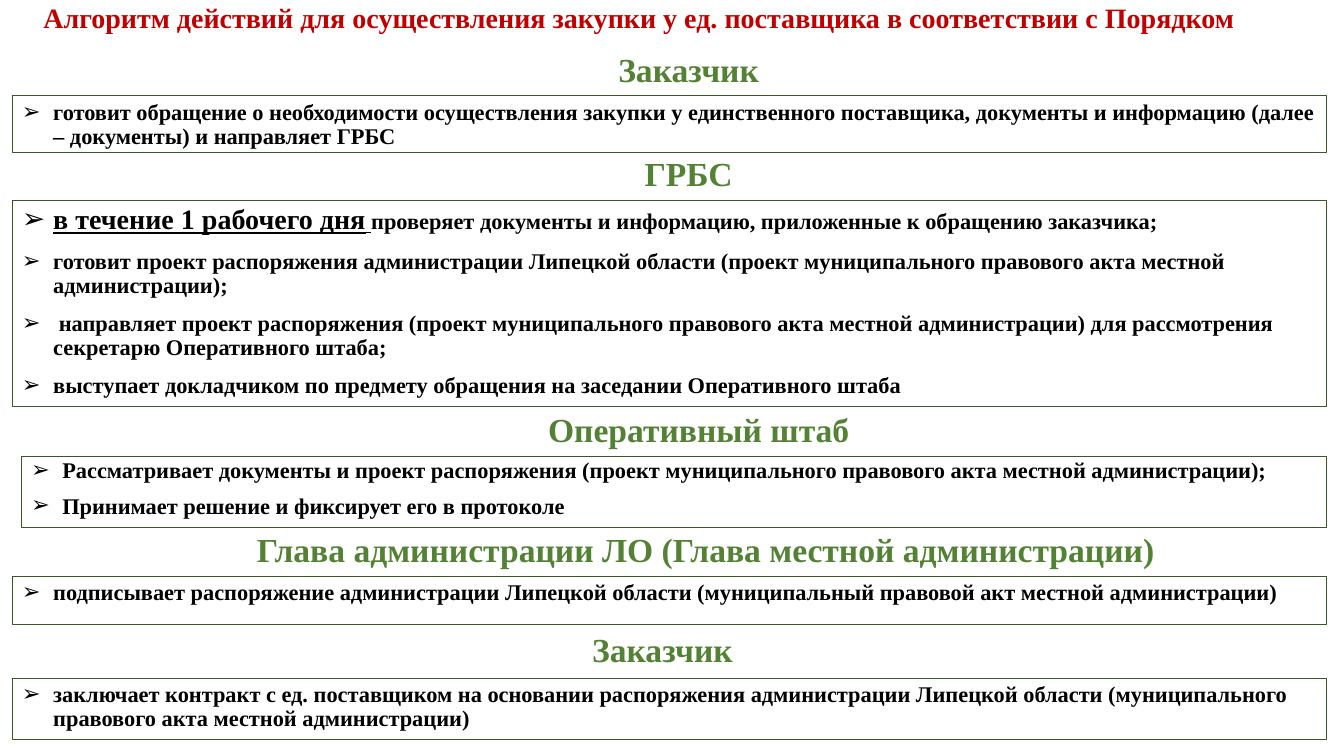
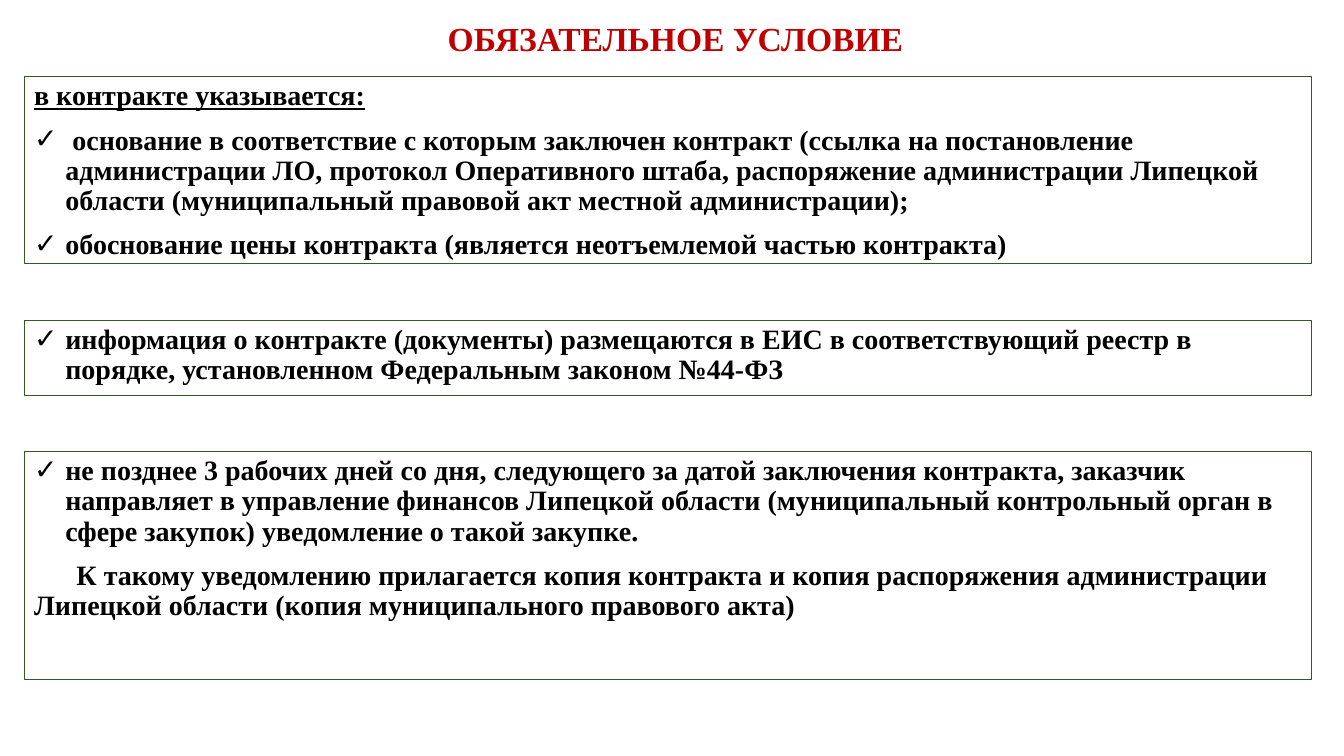
from lxml import etree
from pptx import Presentation
from pptx.dml.color import RGBColor
from pptx.enum.shapes import MSO_SHAPE
from pptx.enum.text import MSO_ANCHOR, MSO_AUTO_SIZE, PP_ALIGN
from pptx.oxml.ns import qn
from pptx.util import Inches, Pt

RECTANGLE = MSO_SHAPE.RECTANGLE
TOP, BOTTOM = MSO_ANCHOR.TOP, MSO_ANCHOR.BOTTOM
LEFT, CENTER = PP_ALIGN.LEFT, PP_ALIGN.CENTER
NO_AUTOFIT = MSO_AUTO_SIZE.NONE

FONT = "Times New Roman"
COLORS = {"title": "C00000", "actor": "548235", "border": "385723", "text": "000000"}
# Paragraph style: marker, left margin, first-line indent
STYLES = {
    "arrow": ("➢", 0.31, -0.31),
    "check": ("✓", 0.31, -0.31),
    "plain": ("", 0, 0),
    "first line": ("", 0, 0.42),
}


def write_paragraphs(shape, paragraphs, color, align=LEFT, anchor=TOP, spacing=0.9):
    """Fill a shape with (style, runs) paragraphs; a run is (text, size, underlined)."""
    frame = shape.text_frame
    frame.word_wrap = True
    frame.auto_size = NO_AUTOFIT
    frame.vertical_anchor = anchor
    for index, (style, runs) in enumerate(paragraphs):
        paragraph = frame.add_paragraph() if index else frame.paragraphs[0]
        paragraph.alignment = align
        paragraph.line_spacing = spacing
        paragraph.space_before = Pt(10)
        marker, margin, indent = STYLES[style]
        properties = paragraph._p.get_or_add_pPr()
        properties.set("marL", str(Inches(margin)))
        properties.set("indent", str(Inches(indent)))
        if marker:
            etree.SubElement(properties, qn("a:buFont"), typeface="Arial")
            etree.SubElement(properties, qn("a:buChar"), char=marker)
        for text, size, underlined in runs:
            run = paragraph.add_run()
            run.text = text
            run.font.name = FONT
            run.font.size = Pt(size)
            run.font.bold = True
            run.font.underline = underlined
            run.font.color.rgb = RGBColor.from_string(COLORS[color])


def add_panel(slide, left, top, width, height, paragraphs, spacing=0.9):
    panel = slide.shapes.add_shape(
        RECTANGLE, Inches(left), Inches(top), Inches(width), Inches(height))
    panel.shadow.inherit = False
    panel.fill.background()
    panel.line.color.rgb = RGBColor.from_string(COLORS["border"])
    panel.line.width = Pt(0.75)
    write_paragraphs(panel, paragraphs, "text", spacing=spacing)


prs = Presentation()
prs.slide_width, prs.slide_height = Inches(13.33), Inches(7.5)

# Titles of both slides: text, size, anchor, box
titles = [
    ("Алгоритм действий для осуществления закупки у ед. поставщика в соответствии с Порядком",
     20, BOTTOM, (0.21, -0.01, 12.26, 0.4)),
    ("ОБЯЗАТЕЛЬНОЕ УСЛОВИЕ", 24, TOP, (1.7, 0.17, 10, 0.46)),
]
slides = []
for text, size, anchor, box in titles:
    slide = prs.slides.add_slide(prs.slide_layouts[5])
    title = slide.shapes.title
    title.left, title.top, title.width, title.height = [Inches(value) for value in box]
    write_paragraphs(title, [("plain", [(text, size, False)])], "title", CENTER, anchor)
    slides.append(slide)
algorithm_slide, condition_slide = slides

# Slide 1: who acts, and what each one does
# Actor, heading left and top, panel left, top and height, line spacing, duties
PANEL_RIGHT = 13.16
steps = [
    ("Заказчик", 1.83, 0.48, 0.12, 0.95, 0.56, 0.9, [
        [("готовит обращение о необходимости осуществления закупки у единственного поставщика, "
          "документы и информацию (далее – документы) и направляет ГРБС", 16, False)],
    ]),
    ("ГРБС", 1.83, 1.51, 0.12, 1.99, 2.04, 0.9, [
        [("в течение 1 рабочего дня", 20, True),
         (" ", 16, True),
         ("проверяет документы и информацию, приложенные к обращению заказчика;", 16, False)],
        [("готовит проект распоряжения администрации Липецкой области (проект муниципального "
          "правового акта местной администрации);", 16, False)],
        [(" направляет проект распоряжения (проект муниципального правового акта местной "
          "администрации) для рассмотрения секретарю Оперативного штаба;", 16, False)],
        [("выступает докладчиком по предмету обращения на заседании Оперативного штаба",
          16, False)],
    ]),
    ("Оперативный штаб", 1.93, 4.05, 0.21, 4.53, 0.7, 0.8, [
        [("Рассматривает документы и проект распоряжения (проект муниципального правового "
          "акта местной администрации);", 16, False)],
        [("Принимает решение и фиксирует его в протоколе", 16, False)],
    ]),
    ("Глава администрации ЛО (Глава местной администрации)", 2, 5.24, 0.12, 5.72, 0.48, 0.9, [
        [("подписывает распоряжение администрации Липецкой области (муниципальный правовой "
          "акт местной администрации)", 16, False)],
    ]),
    ("Заказчик", 1.57, 6.24, 0.12, 6.73, 0.61, 0.9, [
        [("заключает контракт с ед. поставщиком на основании распоряжения администрации "
          "Липецкой области (муниципального правового акта местной администрации)", 16, False)],
    ]),
]
for actor, actor_left, actor_top, left, top, height, spacing, duties in steps:
    heading = algorithm_slide.shapes.add_textbox(
        Inches(actor_left), Inches(actor_top), Inches(10), Inches(0.46))
    write_paragraphs(heading, [("plain", [(actor, 24, False)])], "actor", CENTER)
    add_panel(algorithm_slide, left, top, PANEL_RIGHT - left, height,
              [("arrow", runs) for runs in duties], spacing)

# Slide 2: top and height of each panel, then its (style, text, underlined) paragraphs
conditions = [
    (0.76, 1.85, [
        ("plain", "в контракте указывается:", True),
        ("check", " основание в соответствие с которым заключен контракт (ссылка на "
         "постановление администрации ЛО, протокол Оперативного штаба, распоряжение "
         "администрации Липецкой области (муниципальный правовой акт местной "
         "администрации);", False),
        ("check", "обоснование цены контракта (является неотъемлемой частью контракта)", False),
    ]),
    (3.18, 0.74, [
        ("check", "информация о контракте (документы) размещаются в ЕИС в соответствующий "
         "реестр в порядке, установленном Федеральным законом №44-ФЗ", False),
    ]),
    (4.48, 2.26, [
        ("check", "не позднее 3 рабочих дней со дня, следующего за датой заключения контракта, "
         "заказчик направляет в управление финансов Липецкой области (муниципальный "
         "контрольный орган в сфере закупок) уведомление о такой закупке.", False),
        ("first line", "К такому уведомлению прилагается копия контракта и копия распоряжения "
         "администрации Липецкой области (копия муниципального правового акта)", False),
    ]),
]
for top, height, requirements in conditions:
    add_panel(condition_slide, 0.24, top, 12.77, height,
              [(style, [(text, 20, underlined)]) for style, text, underlined in requirements])

prs.save("out.pptx")
